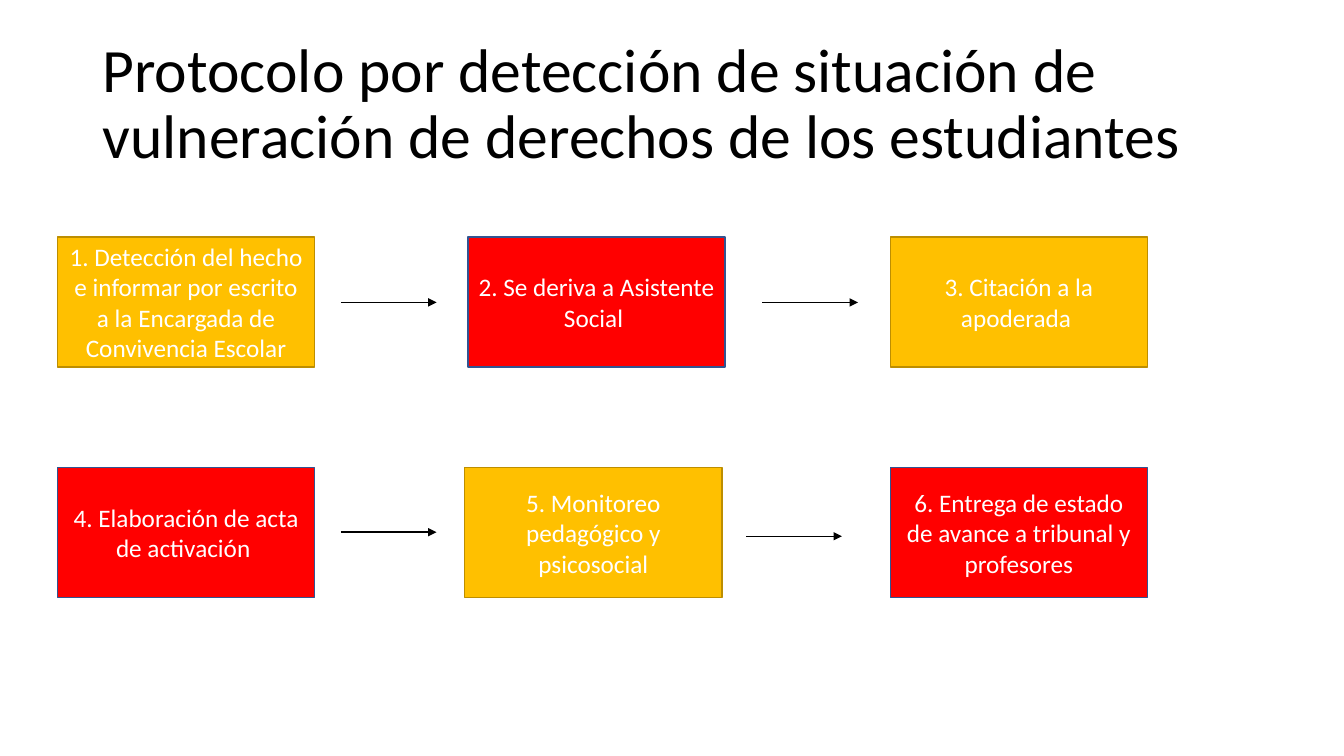
from lxml.etree import SubElement
from pptx import Presentation
from pptx.dml.color import RGBColor
from pptx.enum.shapes import MSO_CONNECTOR, MSO_SHAPE
from pptx.enum.text import MSO_ANCHOR, PP_ALIGN
from pptx.oxml.ns import qn
from pptx.util import Inches, Pt

WHITE = RGBColor(0xFF, 0xFF, 0xFF)
BLACK = RGBColor(0, 0, 0)
GOLD = RGBColor(0xFF, 0xC0, 0x00)
OCHRE = RGBColor(0xBD, 0x8E, 0x00)
RED = RGBColor(0xFF, 0x00, 0x00)
NAVY = RGBColor(0x32, 0x54, 0x91)

STEP_W, STEP_H = 2.55, 1.29
ARROW_W = 0.95
TITLE = "Protocolo por detección de situación de vulneración de derechos de los estudiantes"

# Each row: top, steps as (left, text), arrows as (left, drop from top, weight)
ROWS = [
    (2.35,
     [(0.57, "1. Detección del hecho e informar por escrito a la Encargada de Convivencia Escolar"),
      (4.64, "2. Se deriva a Asistente Social "),
      (8.83, "3. Citación a la apoderada ")],
     [(3.38, 0.65, 0.5), (7.56, 0.65, 0.5)]),
    (4.64,
     [(0.57, "4. Elaboración de acta de activación "),
      (4.61, "5. Monitoreo pedagógico y psicosocial"),
      (8.83, "6. Entrega de estado de avance a tribunal y profesores")],
     [(3.38, 0.64, 1.5), (7.4, 0.68, 0.5)]),
]


def write(shape, text, size, color, **look):
    frame = shape.text_frame
    frame.word_wrap = True
    frame.vertical_anchor = MSO_ANCHOR.MIDDLE
    para = frame.paragraphs[0]
    for name, value in look.items():
        setattr(para, name, value)
    run = para.add_run()
    run.text = text
    font = {"name": "Calibri", "size": Pt(size)}
    for name, value in font.items():
        setattr(run.font, name, value)
    run.font.color.rgb = color


def add_title(slide, box):
    shape = slide.shapes.add_textbox(*map(Inches, box))
    write(shape, TITLE, 44, BLACK, line_spacing=0.9)


def add_step(slide, box, text, fill, edge):
    shape = slide.shapes.add_shape(MSO_SHAPE.RECTANGLE, *map(Inches, box))
    shape.shadow.inherit = False
    shape.fill.solid()
    shape.fill.fore_color.rgb = fill
    shape.line.color.rgb = edge
    shape.line.width = Pt(1)
    write(shape, text, 18, WHITE, alignment=PP_ALIGN.CENTER)


def add_arrow(slide, left, y, weight):
    ends = map(Inches, (left, y, left + ARROW_W, y))
    arrow = slide.shapes.add_connector(MSO_CONNECTOR.STRAIGHT, *ends)
    arrow.line.color.rgb = BLACK
    arrow.line.width = Pt(weight)
    SubElement(arrow.line._get_or_add_ln(), qn("a:tailEnd"), type="triangle")
    SubElement(arrow._element.spPr, qn("a:effectLst"))


def add_row(slide, top, steps, arrows, looks):
    """Draw one row of steps, alternating the given looks, with its arrows."""
    for col, (left, text) in enumerate(steps):
        add_step(slide, (left, top, STEP_W, STEP_H), text, *looks[col % 2])
    for left, drop, weight in arrows:
        add_arrow(slide, left, top + drop, weight)


def main():
    deck = Presentation()
    deck.slide_width, deck.slide_height = Inches(13.33), Inches(7.5)
    slide = deck.slides.add_slide(deck.slide_layouts[6])
    add_title(slide, (0.92, 0.32, 11.5, 1.45))
    looks = [(GOLD, OCHRE), (RED, NAVY)]
    for row in ROWS:
        add_row(slide, *row, looks)
        looks = looks[::-1]
    deck.save("out.pptx")


if __name__ == "__main__":
    main()
